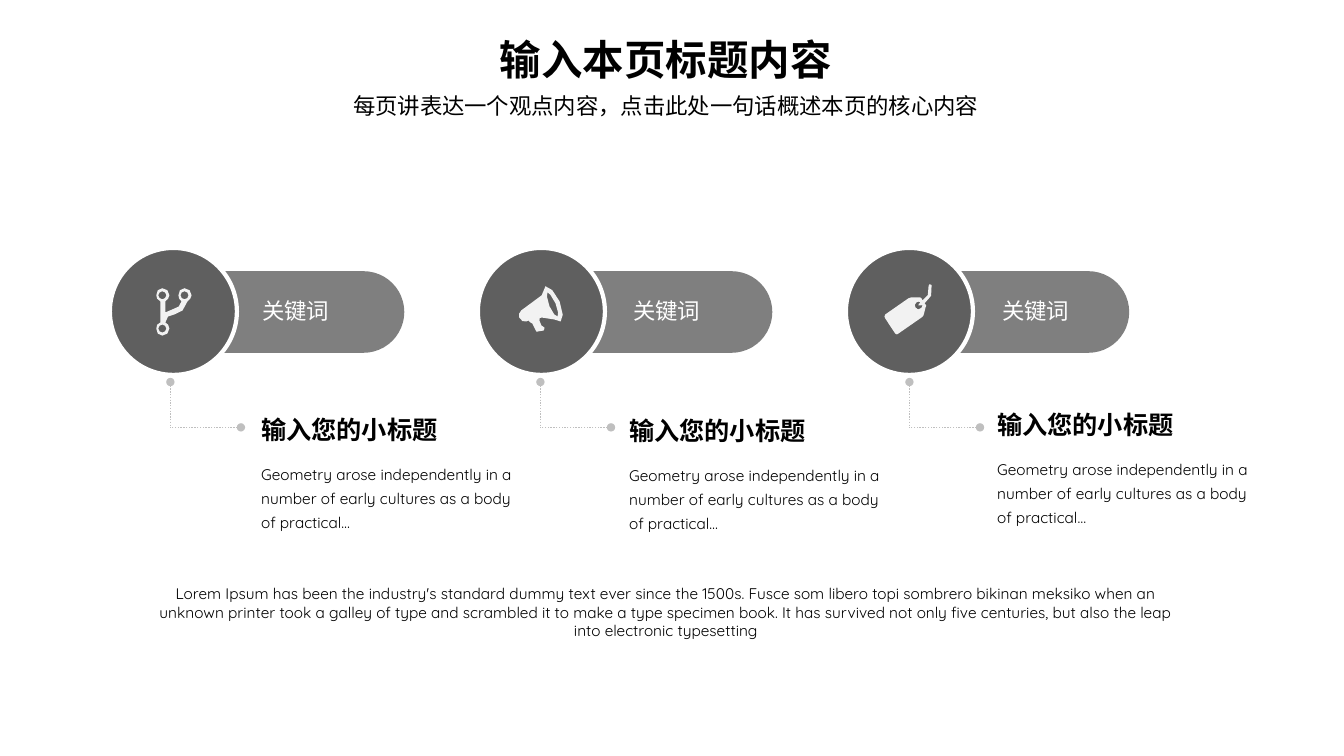
from lxml import etree
from pptx import Presentation
from pptx import util as u
from pptx.dml.color import RGBColor
from pptx.enum import dml, shapes, text
from pptx.oxml import ns

COLORS = {"pill": "7F7F7F", "circle": "5F5F5F", "white": "FFFFFF",
          "icon": "F2F2F2", "dots": "BFBFBF", "ink": "000000"}

# Icon contours in hundredths of an inch: a start point, then three points per curve
BRANCH = [
    [(190, 293), (190, 289), (187, 286), (183, 286), (179, 286), (177, 289), (177, 293),
     (177, 295), (178, 298), (180, 299), (180, 304), (176, 305), (171, 307),
     (169, 308), (166, 309), (164, 310), (164, 299), (164, 299), (164, 299),
     (166, 298), (168, 295), (168, 293), (168, 289), (165, 286), (161, 286),
     (157, 286), (155, 289), (155, 293), (155, 295), (156, 298), (159, 299),
     (159, 320), (159, 320), (159, 320), (156, 321), (155, 323), (155, 326),
     (155, 330), (157, 333), (161, 333), (165, 333), (168, 330), (168, 326),
     (168, 323), (166, 321), (164, 320), (164, 314), (168, 313), (173, 312),
     (178, 310), (185, 308), (186, 299), (188, 298), (190, 295), (190, 293)],
]
for x, y in [(161, 293), (161, 326), (183, 293)]:  # ring holes
    BRANCH.append([(x - 4, y), (x - 4, y - 2), (x - 2, y - 4), (x, y - 4),
                   (x + 2, y - 4), (x + 4, y - 2), (x + 4, y),
                   (x + 4, y + 2), (x + 2, y + 4), (x, y + 4),
                   (x - 2, y + 4), (x - 4, y + 2), (x - 4, y)])
MEGAPHONE = [
    [(555, 299), (551, 290), (544, 283), (541, 284), (536, 287), (544, 297), (517, 308),
     (515, 309), (514, 313), (515, 315), (516, 318), (520, 320), (522, 319),
     (522, 319), (524, 318), (524, 318), (525, 321), (527, 319), (528, 321),
     (529, 322), (530, 326), (531, 327), (531, 329), (533, 330), (533, 329),
     (534, 329), (537, 328), (539, 328), (540, 327), (540, 326), (540, 325),
     (539, 324), (538, 324), (537, 323), (537, 322), (535, 319), (535, 318),
     (534, 316), (536, 315), (537, 315), (550, 313), (552, 321), (556, 319),
     (559, 318), (559, 309), (555, 299)],
    [(553, 314), (552, 315), (548, 311), (545, 304), (542, 297), (542, 290), (543, 290),
     (543, 289), (548, 294), (551, 301), (554, 308), (554, 314), (553, 314)],
]
TAG = [
    [(924, 283), (924, 283), (923, 282), (922, 282), (921, 283), (921, 284), (921, 284),
     (923, 291), (919, 296), (915, 298), (914, 296), (914, 296), (914, 296),
     (914, 296), (913, 295), (912, 295), (904, 295), (904, 295), (904, 295),
     (903, 295), (902, 296), (901, 296), (878, 312), (878, 312), (878, 312),
     (877, 313), (877, 315), (878, 316), (888, 331), (888, 331), (888, 331),
     (889, 332), (890, 332), (891, 331), (914, 315), (914, 315), (914, 315),
     (915, 314), (916, 313), (916, 313), (918, 305), (918, 305), (918, 305),
     (919, 304), (919, 303), (918, 302), (917, 301), (917, 301), (917, 301),
     (922, 297), (927, 291), (924, 283)],
    [(913, 306), (912, 308), (909, 307), (908, 305), (907, 304), (907, 301), (909, 300),
     (910, 299), (912, 299), (913, 300), (913, 300), (912, 301), (912, 301),
     (911, 301), (911, 302), (911, 303), (912, 303), (912, 303), (913, 303),
     (914, 303), (914, 303), (915, 302), (915, 304), (914, 306), (913, 306)],
]

# One entry per column
COLUMNS = [
    {"icon": BRANCH, "pill": 1.64, "keyword": 2.55, "elbow": 1.69, "heading_top": 3.89},
    {"icon": MEGAPHONE, "pill": 5.29, "keyword": 6.23, "elbow": 5.36, "heading_top": 3.9},
    {"icon": TAG, "pill": 8.83, "keyword": 9.89, "elbow": 9.02, "heading_top": 3.84},
]


def write(shape, words, size, color="ink", bold=False, margins=(0.1, 0.05, 0.1, 0.05),
          anchor=text.MSO_ANCHOR.TOP, **paragraph_format):
    frame = shape.text_frame
    frame.text = words
    settings = {"word_wrap": True, "auto_size": text.MSO_AUTO_SIZE.NONE,
                "vertical_anchor": anchor}
    for side, margin in zip(("left", "top", "right", "bottom"), margins):
        settings["margin_" + side] = u.Inches(margin)
    paragraph = frame.paragraphs[0]
    font = paragraph.runs[0].font
    font.color.rgb = RGBColor.from_string(COLORS[color])
    formats = [(frame, settings), (paragraph, paragraph_format),
               (font, {"name": "Quicksand", "size": u.Pt(size), "bold": bold})]
    for target, values in formats:
        for name, value in values.items():
            setattr(target, name, value)


def paint(shape, fill=None, line=None):
    shape.shadow.inherit = False
    if fill:
        shape.fill.solid()
        shape.fill.fore_color.rgb = RGBColor.from_string(COLORS[fill])
    else:
        shape.fill.background()
    if line:
        shape.line.color.rgb = RGBColor.from_string(COLORS[line])
        shape.line.width = u.Pt(3)
    else:
        shape.line.fill.background()


presentation = Presentation()
presentation.slide_width = u.Inches(13.33)
presentation.slide_height = u.Inches(7.5)
slide = presentation.slides.add_slide(presentation.slide_layouts[5])
canvas = slide.shapes
center = text.PP_ALIGN.CENTER

# Title and subtitle
title = canvas.title
title.left, title.top, title.width, title.height = map(u.Inches, (0.83, 0.2, 11.55, 0.65))
write(title, "输入本页标题内容", 29.6, bold=True, alignment=center, line_spacing=u.Pt(42))
subtitle = canvas.add_textbox(*map(u.Inches, (0.83, 0.89, 11.55, 0.39)))
write(subtitle, "每页讲表达一个观点内容，点击此处一句话概述本页的核心内容", 16,
      alignment=center, line_spacing=0.9, space_before=u.Pt(10))

for index, column in enumerate(COLUMNS):
    # Pill and circle
    pill = canvas.add_shape(shapes.MSO_SHAPE.ROUNDED_RECTANGLE,
                            *map(u.Inches, (column["pill"], 2.69, 2.37, 0.81)))
    pill.adjustments[0] = 0.5
    paint(pill, "pill")
    circle = canvas.add_shape(shapes.MSO_SHAPE.OVAL,
                              *map(u.Inches, (1.09 + 3.65 * index, 2.46, 1.26, 1.26)))
    paint(circle, "circle", "white")

    # Icon: each curve becomes two straight pieces, each straight edge stays one
    builder = None
    for contour in column["icon"]:
        points = [(u.Inches(x / 100), u.Inches(y / 100)) for x, y in contour]
        vertices = []
        for start in range(0, len(points) - 1, 3):
            curve = points[start:start + 4]
            if curve[1] != curve[3]:
                vertices.append(tuple((a + 3 * b + 3 * c + d) / 8 for a, b, c, d in zip(*curve)))
            vertices.append(curve[3])
        if builder is None:
            builder = canvas.build_freeform(*points[0])
        else:
            builder.move_to(*points[0])
        builder.add_line_segments(vertices[:-1], close=True)
    paint(builder.convert_to_shape(), "icon")

    # Keyword
    keyword = canvas.add_shape(shapes.MSO_SHAPE.RECTANGLE,
                               *map(u.Inches, (column["keyword"], 2.89, 1.07, 0.42)))
    paint(keyword)
    write(keyword, "关键词", 16, "white", margins=(0.05, 0, 0, 0),
          anchor=text.MSO_ANCHOR.MIDDLE, alignment=text.PP_ALIGN.LEFT, line_spacing=0.9)

    # Dotted elbow with round ends
    elbow = column["elbow"]
    for start_x, start_y in [(elbow + 0.7, 4.24), (elbow, 3.79)]:
        connector = canvas.add_connector(shapes.MSO_CONNECTOR.STRAIGHT,
                                         *map(u.Inches, (start_x, start_y, elbow, 4.24)))
        connector.line.color.rgb = RGBColor.from_string(COLORS["dots"])
        connector.line.width = u.Pt(1)
        connector.line.dash_style = dml.MSO_LINE.ROUND_DOT
        properties = connector._element.spPr
        etree.SubElement(properties.find(ns.qn("a:ln")), ns.qn("a:headEnd"), type="oval")
        etree.SubElement(properties, ns.qn("a:effectLst"))

    # Heading and description
    left, top = 2.51 + 3.65 * index, column["heading_top"]
    heading = canvas.add_textbox(*map(u.Inches, (left, top, 2.69, 0.6)))
    write(heading, "输入您的小标题", 18, bold=True, margins=[0.08] * 4,
          anchor=text.MSO_ANCHOR.BOTTOM)
    description = canvas.add_textbox(*map(u.Inches, (left, top + 0.59, 2.69, 1.01)))
    write(description, "Geometry arose independently in a number of early cultures "
          "as a body of practical…", 11, margins=[0.08] * 4, line_spacing=1.3)

# Closing paragraph
closing = canvas.add_textbox(*map(u.Inches, (1.36, 5.75, 10.49, 0.72)))
write(closing, "Lorem Ipsum has been the industry's standard dummy text ever since the 1500s. "
      "Fusce som libero topi sombrero bikinan meksiko when an unknown printer took a galley "
      "of type and scrambled it to make a type specimen book. It has survived not only five "
      "centuries, but also the leap into electronic typesetting", 11,
      alignment=center, space_before=u.Pt(2.2), space_after=u.Pt(6))

presentation.save("out.pptx")
